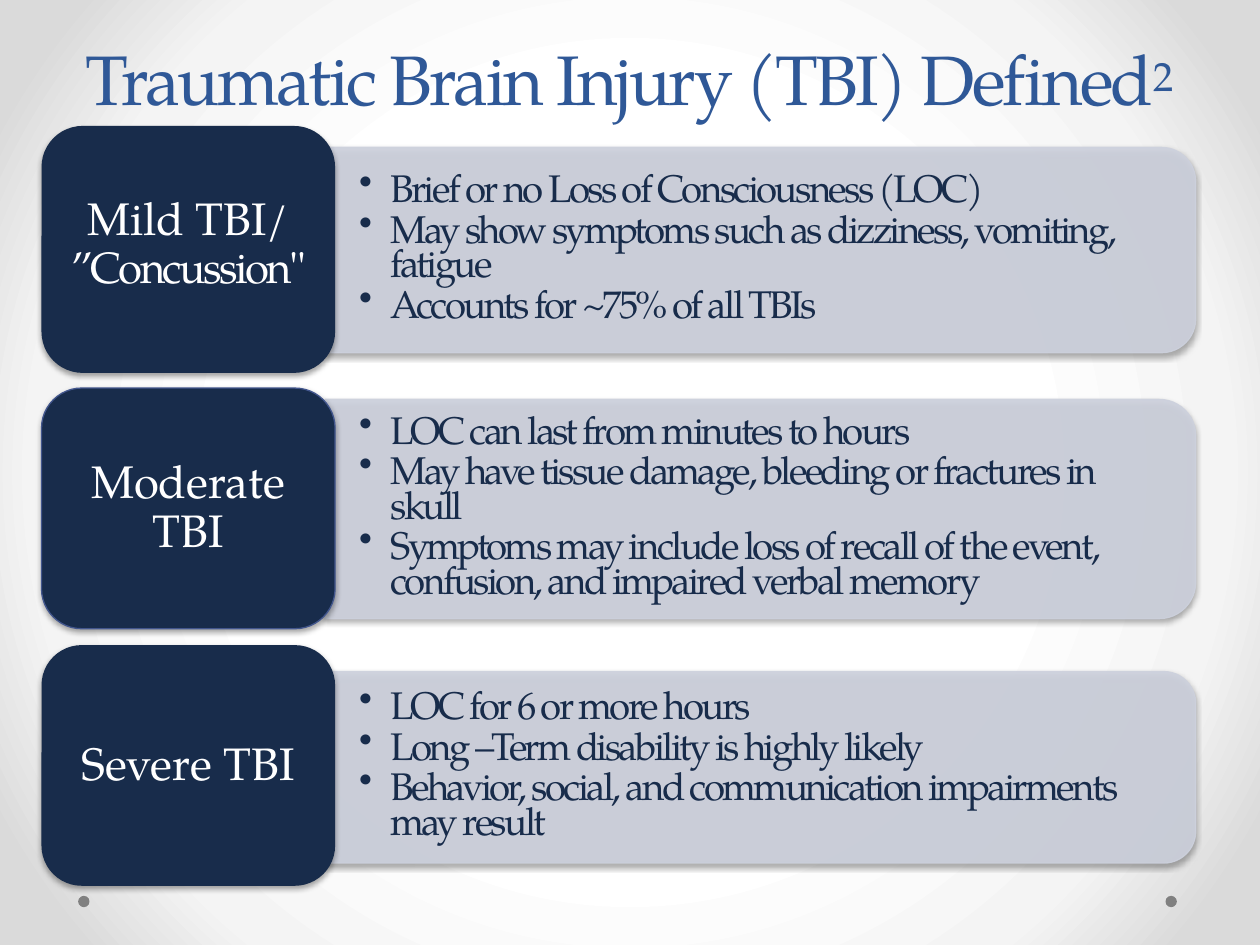
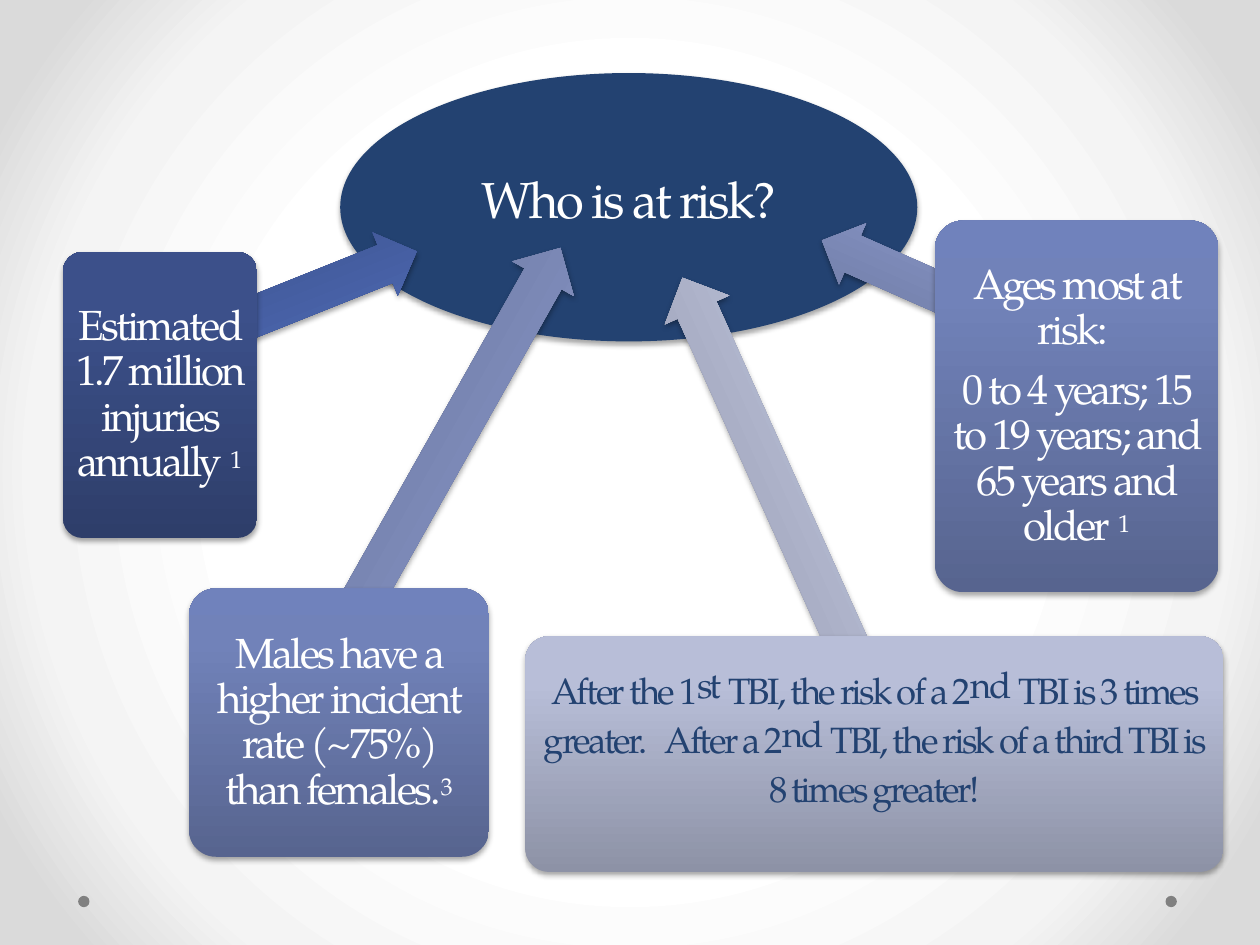
"""Build two slides about traumatic brain injury."""
import pptx
import pptx.dml.color
import pptx.enum.shapes
import pptx.enum.text
import pptx.oxml
import pptx.oxml.ns
import pptx.util
from lxml import etree

SHAPES = pptx.enum.shapes.MSO_SHAPE
ALIGN = pptx.enum.text.PP_ALIGN
ANCHOR = pptx.enum.text.MSO_ANCHOR
qn = pptx.oxml.ns.qn

COLUMNS, ROWS = 100, 75
CELL = pptx.util.Inches(0.1)
FONT = "TeX Gyre Pagella"
WHITE, NAVY, BLUE, TITLE_BLUE = "FFFFFF", "182C4B", "234271", "2F5897"
PANEL, LABEL_EDGE, DOT = "CDD1DD", "42568D", "808080"
BACKDROP = ((50, "FFFFFF"), (76, "F4F4F4"), (92, "DADADA"))
TIGHT = -1.5

DEEP_BOX = ("2E3E6A", "3C508A", "3B508C")
MID_BOX = ("57648F", "7182B9", "7082BC")
PALE_BOX = ("8D92A6", "B8BED8", "B8BFDA")
DEEP_ARROW = ("3B5089", "4D68B2", "4C67B5")
MID_ARROW = ("677298", "8694C5", "8595C7")
PALE_ARROW = ("9195A8", "BCC2DB", "BCC3DC")


def rgb(code):
    """Return the colour for a hex string."""
    return pptx.dml.color.RGBColor.from_string(code)


def cells(*counts):
    """Turn grid cell counts into lengths."""
    return [round(count * CELL) for count in counts]


def drawing_xml(body, tag, attributes=""):
    """Parse a drawing element with the given tag and body."""
    spaces = pptx.oxml.ns.nsdecls("a", "p")
    return pptx.oxml.parse_xml(f"<{tag} {spaces} {attributes}>{body}</{tag}>")


def gradient(stops, direction):
    """Return a gradient fill from (percent, colour) stops."""
    points = "".join(
        f'<a:gs pos="{percent * 1000}"><a:srgbClr val="{code}"/></a:gs>'
        for percent, code in stops
    )
    body = f"<a:gsLst>{points}</a:gsLst>{direction}"
    return drawing_xml(body, "a:gradFill", 'rotWithShape="1"')


def add_shadow(shape):
    """Give the shape a soft shadow straight below it."""
    effects = shape.element.spPr.find(qn("a:effectLst"))
    effects.append(drawing_xml(
        '<a:srgbClr val="000000"><a:alpha val="35000"/></a:srgbClr>',
        "a:outerShdw",
        'blurRad="40000" dist="23000" dir="5400000" rotWithShape="0"',
    ))


def add_box(page, kind, place, fill, edge=None, alpha=None, shadow=True):
    """Add a preset shape with a plain colour or a three-colour gradient."""
    shape = page.shapes.add_shape(kind, *cells(*place))
    if isinstance(fill, str):
        shape.fill.solid()
        shape.fill.fore_color.rgb = rgb(fill)
    else:
        shape.element.spPr.append(gradient(
            zip((0, 80, 100), fill), '<a:lin ang="16200000" scaled="0"/>'))
    if edge:
        shape.line.color.rgb = rgb(edge)
        shape.line.width = pptx.util.Pt(0.75)
    else:
        shape.line.fill.background()
    if alpha:
        for colour in shape.element.spPr.iter(qn("a:srgbClr")):
            etree.SubElement(colour, qn("a:alpha")).set("val", str(alpha * 1000))
    shape.shadow.inherit = False
    if shadow:
        add_shadow(shape)
    return shape


def prepare_frame(shape, anchor, side, upright):
    """Set wrapping, anchor and insets, given in cells, and return the frame."""
    frame = shape.text_frame
    frame.word_wrap = True
    frame.vertical_anchor = anchor
    frame.margin_left, frame.margin_right = cells(side, side)
    frame.margin_top, frame.margin_bottom = cells(upright, upright)
    return frame


def write_paragraph(para, spans, size, colour, leading, after=0,
                    spacing=TIGHT, align=ALIGN.CENTER):
    """Write (text, baseline percent) spans in one style."""
    para.alignment = align
    para.line_spacing = leading
    if after:
        para._p.get_or_add_pPr().append(drawing_xml(
            f'<a:spcPct val="{after * 1000}"/>', "a:spcAft"))
    for text, baseline in spans:
        span = para.add_run()
        span.text = text
        span.font.name = FONT
        span.font.size = pptx.util.Pt(size)
        span.font.color.rgb = rgb(colour)
        settings = span.font._element
        if baseline:
            settings.set("baseline", str(baseline * 1000))
        if spacing:
            settings.set("spc", str(round(spacing * 100)))


def next_paragraph(frame, index):
    """Return the first paragraph, or a new one after it."""
    return frame.add_paragraph() if index else frame.paragraphs[0]


def start_page(deck):
    """Add a blank page with the shared backdrop and corner dots."""
    page = deck.slides.add_slide(deck.slide_layouts[6])
    centre = ('<a:path path="circle"><a:fillToRect l="50000" t="50000" '
              'r="50000" b="50000"/></a:path>')
    backdrop = drawing_xml("<p:bgPr><a:effectLst/></p:bgPr>", "p:bg")
    backdrop[0].insert(0, gradient(BACKDROP, centre))
    page.element.cSld.insert(0, backdrop)
    for left in (92.5, 6.2):
        add_box(page, SHAPES.OVAL, (left, 71.1, 0.9, 0.9), DOT, shadow=False)
    return page


def add_title(page, spans):
    """Add the page title."""
    box = page.shapes.add_textbox(*cells(5, 1.7, 90, 8.3))
    frame = prepare_frame(box, ANCHOR.BOTTOM, 1, 0.5)
    write_paragraph(frame.paragraphs[0], spans, 40, TITLE_BLUE, pptx.util.Pt(58))


def add_panel(page, left, top, width, height):
    """Add a panel with rounded right corners by turning a shape upright."""
    shift = (width - height) / 2
    panel = add_box(page, SHAPES.ROUND_2_SAME_RECTANGLE,
                    (left + shift, top - shift, height, width),
                    PANEL, PANEL, alpha=90)
    panel.rotation = 90


def add_bullets(page, place, lines):
    """Add a bulleted list."""
    box = page.shapes.add_textbox(*cells(*place))
    frame = prepare_frame(box, ANCHOR.MIDDLE, 2.7, 1.4)
    for index, line in enumerate(lines):
        para = next_paragraph(frame, index)
        para.level = 1
        write_paragraph(para, [(line, 0)], 22, NAVY, 0.75, 15, align=ALIGN.LEFT)
        settings = para._p.get_or_add_pPr()
        indent = pptx.util.Inches(0.25)
        settings.set("marL", str(indent))
        settings.set("indent", str(-indent))
        settings.append(drawing_xml("", "a:buChar", 'char="•"'))


def add_severity(page, label_top, label_height, panel_top, panel_height,
                 label_lines, leading, edge, bullets):
    """Add one severity row: panel, bullets and label."""
    add_panel(page, 25.8, panel_top, 69.1, panel_height)
    add_bullets(page, (25.8, panel_top + 0.8, 68.4, panel_height - 1.6), bullets)
    label = add_box(page, SHAPES.ROUNDED_RECTANGLE,
                    (3.3, label_top, 23.3, label_height), NAVY, edge)
    frame = prepare_frame(label, ANCHOR.MIDDLE, 1.1, 0.5)
    for index, (text, size, spacing) in enumerate(label_lines):
        write_paragraph(next_paragraph(frame, index), [(text, 0)], size, WHITE,
                        leading, 35, spacing)


def add_arrow(page, place, turn, fill):
    """Add a block arrow turned towards the question."""
    arrow = add_box(page, SHAPES.LEFT_ARROW, place, fill)
    arrow.adjustments[0], arrow.adjustments[1] = 0.6, 0.5
    arrow.rotation = turn


def add_fact(page, place, fill, paragraphs, size=24, colour=WHITE,
             leading=0.9, inset=0.5):
    """Add a rounded box with a risk fact."""
    box = add_box(page, SHAPES.ROUNDED_RECTANGLE, place, fill)
    box.adjustments[0] = 0.1
    frame = prepare_frame(box, ANCHOR.MIDDLE, inset, inset)
    for index, spans in enumerate(paragraphs):
        write_paragraph(next_paragraph(frame, index), spans, size, colour,
                        leading, 35)


def build_definitions(deck):
    """Build the page that defines the three severities."""
    page = start_page(deck)
    add_title(page, [("Traumatic Brain Injury (TBI) Defined", 0), ("2", 20)])
    add_severity(
        page, 10, 19.6, 11.7, 16.3,
        [("Mild TBI/", 26, 0), ("”Concussion\"", 25, TIGHT)], 0.6, None,
        ["Brief or no Loss of Consciousness (LOC)",
         "May show symptoms such as dizziness, vomiting, fatigue",
         "Accounts for ~75% of all TBIs"])
    add_severity(
        page, 30.8, 19.1, 31.7, 17.4,
        [("Moderate TBI", 26, 0)], 0.9, LABEL_EDGE,
        ["LOC can last from minutes to hours",
         "May have tissue damage, bleeding or fractures in skull",
         "Symptoms may include loss of recall of the event, "
         "confusion, and impaired verbal memory"])
    add_severity(
        page, 51.2, 19.1, 53.3, 15.2,
        [("Severe TBI", 26, 0)], 0.9, None,
        ["LOC for 6 or more hours",
         "Long –Term disability is highly likely",
         "Behavior, social, and communication impairments may result"])


def build_risks(deck):
    """Build the page that shows who is at risk."""
    page = start_page(deck)
    question = add_box(page, SHAPES.OVAL, (27, 5.8, 45.8, 21.3), BLUE)
    frame = prepare_frame(question, ANCHOR.MIDDLE, 0.3, 0.3)
    write_paragraph(frame.paragraphs[0], [("Who is at risk?", 20)], 50, WHITE,
                    0.9, 35)

    add_arrow(page, (13.6, 21, 20.2, 5.4), 158.2, DEEP_ARROW)
    add_fact(page, (5, 20, 15.4, 22.7), DEEP_BOX,
             [[("Estimated 1.7 million injuries annually ", 0), ("1", 20)]])
    add_arrow(page, (19.8, 31.3, 33.1, 5.6), 119.4, MID_ARROW)
    add_fact(page, (15, 46.7, 23.8, 21.3), MID_BOX,
             [[("Males have a higher incident rate (~75%) than females.", 0),
               ("3", 20)]])
    add_arrow(page, (44.1, 34.8, 34.1, 5.6), 65.8, PALE_ARROW)
    add_fact(page, (41.7, 50.5, 55.4, 18.7), PALE_BOX,
             [[("After the 1", 20), ("st", 30),
               (" TBI, the risk of a 2", 20), ("nd", 30),
               (" TBI is 3 times greater.   After a 2", 20), ("nd", 30),
               (" TBI, the risk of a third TBI is 8 times greater!", 20)]],
             36, BLUE, pptx.util.Pt(28), 0.7)
    add_arrow(page, (64.4, 20.4, 19.6, 5.3), 23.9, MID_ARROW)
    add_fact(page, (74.2, 17.5, 22.5, 29.5), MID_BOX,
             [[("Ages most at risk: ", 0)],
              [("0 to 4 years; 15 to 19 years; and 65 years and older ", 0),
               ("1", 20)]])


def main():
    """Build and save the deck."""
    deck = pptx.Presentation()
    deck.slide_width, deck.slide_height = cells(COLUMNS, ROWS)
    build_definitions(deck)
    build_risks(deck)
    deck.save("out.pptx")


if __name__ == "__main__":
    main()
